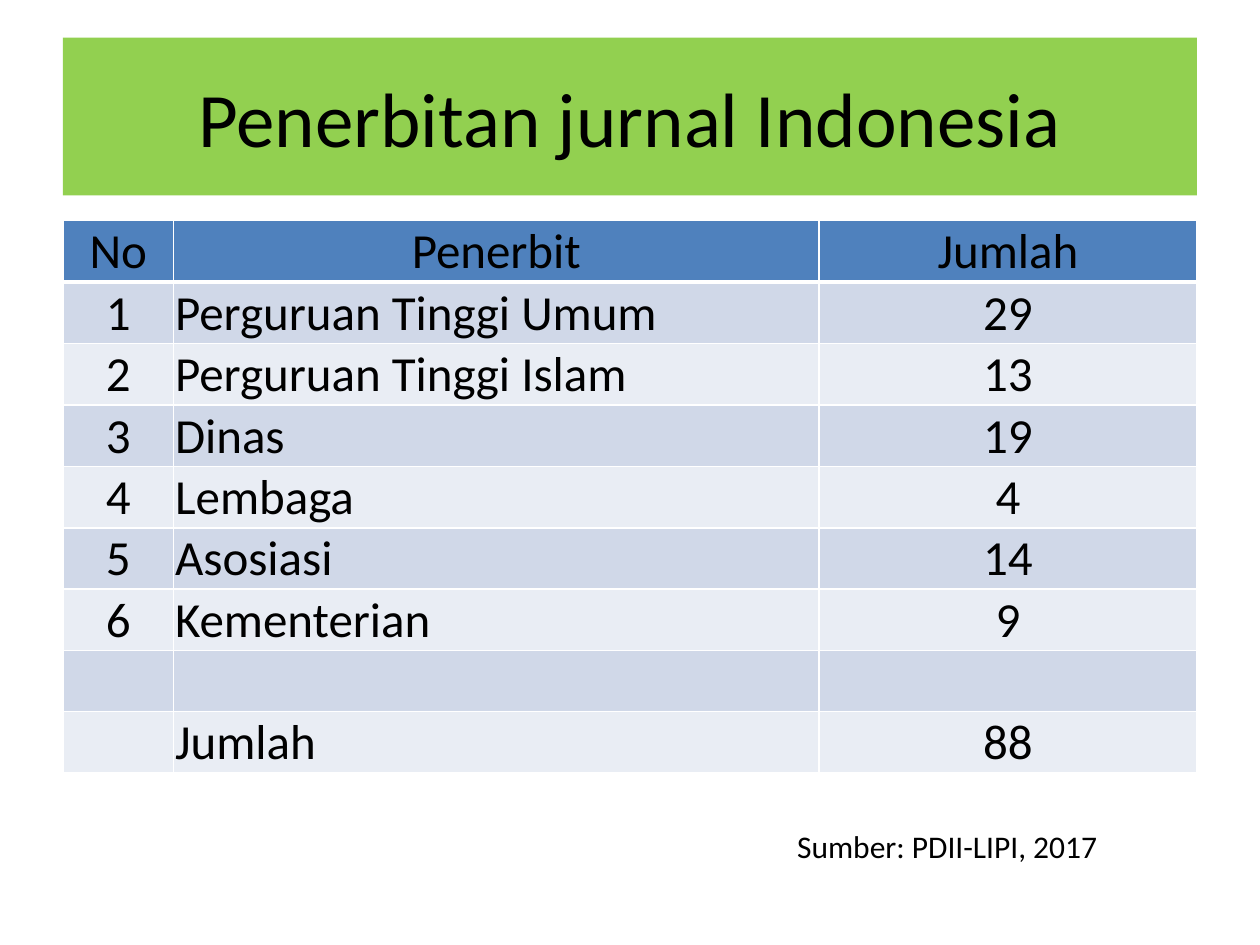
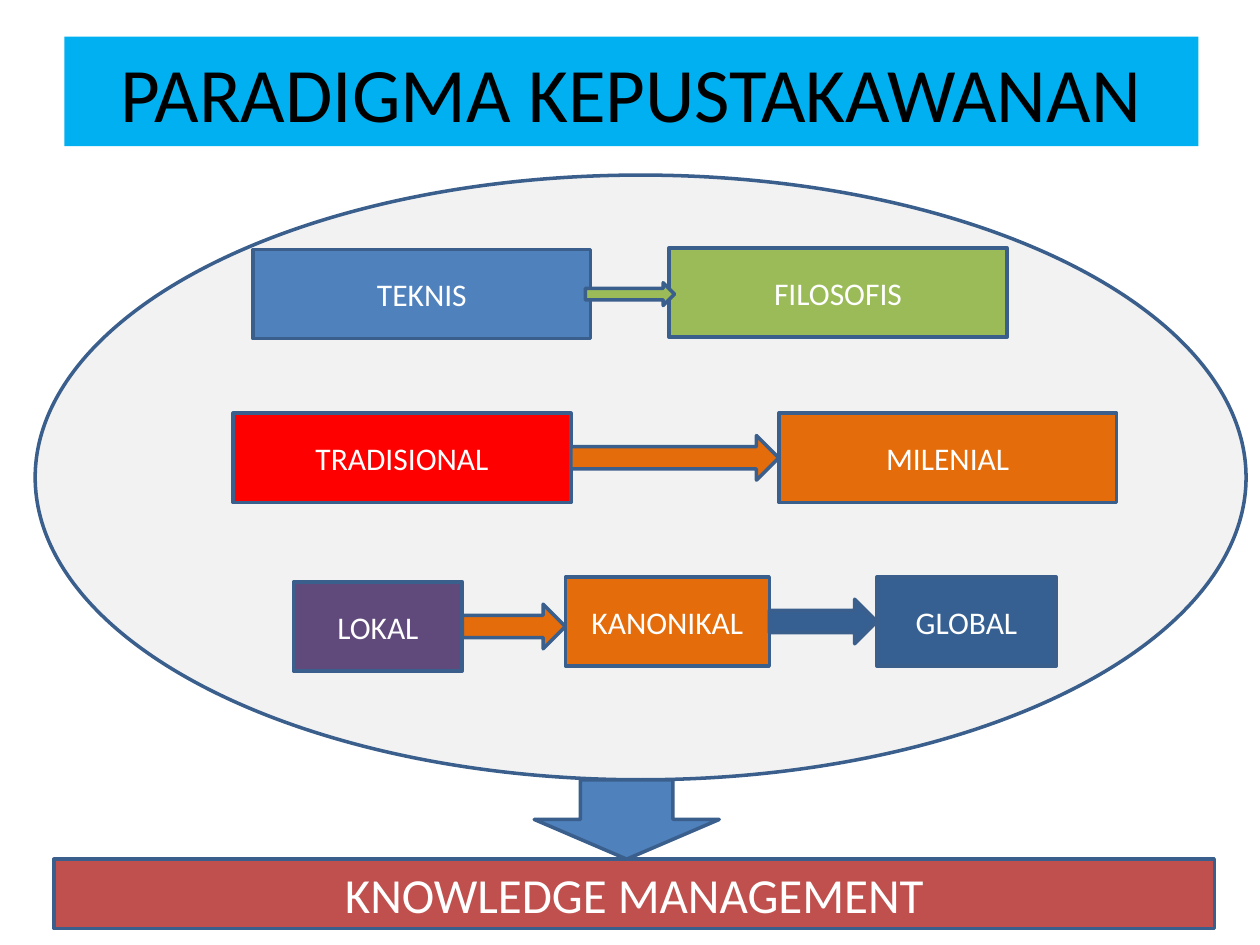
import dataclasses

import lxml.etree
import pptx
import pptx.dml.color
import pptx.enum.shapes
import pptx.enum.text
import pptx.oxml.ns
import pptx.util

Cm = pptx.util.Cm
Pt = pptx.util.Pt
ALIGN = pptx.enum.text.PP_ALIGN
ANCHOR = pptx.enum.text.MSO_ANCHOR
SHAPE = pptx.enum.shapes.MSO_SHAPE


@dataclasses.dataclass(frozen=True)
class Theme:
    font: str = "Calibri"
    title_size: int = 44
    large_size: int = 28
    body_size: int = 18
    line_width: int = 2
    black: str = "000000"
    white: str = "FFFFFF"
    outline: str = "3A5F8C"
    lime: str = "92D050"
    sky: str = "00B0F0"
    blue: str = "4F81BD"
    navy: str = "376092"
    green: str = "9BBB59"
    red: str = "FF0000"
    orange: str = "E46C0A"
    purple: str = "604A7B"
    brick: str = "C0504D"
    pale: str = "F2F2F2"
    bands: tuple = ("D0D8E8", "E9EDF4")


@dataclasses.dataclass(frozen=True)
class Box:
    left: float
    top: float
    width: float
    height: float

    @property
    def right(self):
        return self.left + self.width

    @property
    def middle(self):
        return self.top + self.height / 2

    def inside(self, left, top, width, height):
        return Box(self.left + left, self.top + top, width, height)

    def lengths(self):
        return [Cm(value) for value in dataclasses.astuple(self)]


THEME = Theme()

PUBLISHERS = [
    ("No", "Penerbit", "Jumlah"),
    ("1", "Perguruan Tinggi Umum", "29"),
    ("2", "Perguruan Tinggi Islam", "13"),
    ("3", "Dinas", "19"),
    ("4", "Lembaga", "4"),
    ("5", "Asosiasi", "14"),
    ("6", "Kementerian", "9"),
    ("", "", ""),
    ("", "Jumlah", "88"),
]
COLUMN_WIDTHS = (2.23, 13.01, 7.62)

STAGE_HEIGHT = 1.8
SHIFTS = [
    {
        "stages": [
            ("TEKNIS", THEME.blue, 4.39, 1.5, 6.81),
            ("FILOSOFIS", THEME.green, 12.78, 1.47, 6.81),
        ],
        "arrow_height": 0.46,
        "overlap": 0.11,
    },
    {
        "stages": [
            ("TRADISIONAL", THEME.red, 3.99, 4.8, 6.81),
            ("MILENIAL", THEME.orange, 14.99, 4.8, 6.81),
        ],
        "arrow_height": 0.9,
        "overlap": 0,
    },
    {
        "stages": [
            ("LOKAL", THEME.purple, 5.21, 8.2, 3.4),
            ("KANONIKAL", THEME.orange, 10.69, 8.1, 4.11),
            ("GLOBAL", THEME.navy, 16.97, 8.1, 3.61),
        ],
        "arrow_height": 0.9,
        "overlap": 0,
    },
]


def rgb(color):
    return pptx.dml.color.RGBColor.from_string(color)


def set_attributes(target, values):
    for name, value in values.items():
        setattr(target, name, value)


def write_text(text_frame, text, size, color, alignment):
    paragraph = text_frame.paragraphs[0]
    paragraph.alignment = alignment
    run = paragraph.add_run()
    run.text = text
    set_attributes(run.font, {"name": THEME.font, "size": Pt(size)})
    run.font.color.rgb = rgb(color)


def paint(target, color):
    target.fill.solid()
    target.fill.fore_color.rgb = rgb(color)


def add_block(slide, kind, box, fill, outlined=True, text="", size=THEME.body_size, color=THEME.white):
    shape = slide.shapes.add_shape(kind, *box.lengths())
    shape.shadow.inherit = False
    paint(shape, fill)
    if outlined:
        shape.line.color.rgb = rgb(THEME.outline)
        shape.line.width = Pt(THEME.line_width)
    else:
        shape.line.fill.background()
    if text:
        set_attributes(shape.text_frame, {"word_wrap": True, "vertical_anchor": ANCHOR.MIDDLE})
        write_text(shape.text_frame, text, size, color, ALIGN.CENTER)
    return shape


def add_title(slide, box, text, fill):
    add_block(slide, SHAPE.RECTANGLE, box, fill, False, text, THEME.title_size, THEME.black)


def set_borders(cell, widths):
    properties = cell._tc.get_or_add_tcPr()
    for side, width in widths.items():
        line = lxml.etree.SubElement(properties, pptx.oxml.ns.qn(f"a:ln{side}"), w=str(Pt(width)))
        fill = lxml.etree.SubElement(line, pptx.oxml.ns.qn("a:solidFill"))
        lxml.etree.SubElement(fill, pptx.oxml.ns.qn("a:srgbClr"), val=THEME.white)


def add_publisher_table(slide, box):
    frame = slide.shapes.add_table(len(PUBLISHERS), len(COLUMN_WIDTHS), *box.lengths())
    table = frame.table
    for column, width in zip(table.columns, COLUMN_WIDTHS):
        column.width = Cm(width)
    cell_format = {
        "margin_left": Cm(0.03),
        "margin_top": Cm(0.03),
        "margin_right": Cm(0.03),
        "margin_bottom": 0,
        "vertical_anchor": ANCHOR.BOTTOM,
    }
    for row_index, values in enumerate(PUBLISHERS):
        table.rows[row_index].height = Cm(box.height / len(PUBLISHERS))
        header = row_index == 0
        borders = {"L": 1, "R": 1, "T": 3 if row_index == 1 else 1, "B": 3 if header else 1}
        fill = THEME.blue if header else THEME.bands[(row_index - 1) % 2]
        for column_index, text in enumerate(values):
            cell = table.cell(row_index, column_index)
            set_attributes(cell, cell_format)
            set_borders(cell, borders)
            paint(cell, fill)
            if text:
                alignment = ALIGN.LEFT if column_index == 1 and not header else ALIGN.CENTER
                write_text(cell.text_frame, text, THEME.large_size, THEME.black, alignment)


def add_citation(slide, box, text):
    text_frame = slide.shapes.add_textbox(*box.lengths()).text_frame
    text_frame.word_wrap = False
    write_text(text_frame, text, THEME.body_size, THEME.black, ALIGN.LEFT)


def add_shift(slide, box, stages, arrow_height, overlap):
    placed = []
    for text, fill, left, top, width in stages:
        stage = box.inside(left, top, width, STAGE_HEIGHT)
        add_block(slide, SHAPE.RECTANGLE, stage, fill, text=text)
        placed.append((stage, fill))
    for (start, _), (end, fill) in zip(placed, placed[1:]):
        arrow = Box(
            start.right - overlap,
            start.middle - arrow_height / 2,
            end.left - start.right + 2 * overlap,
            arrow_height,
        )
        add_block(slide, SHAPE.RIGHT_ARROW, arrow, fill)


def add_paradigm(slide, box):
    add_block(slide, SHAPE.OVAL, box, THEME.pale)
    for shift in SHIFTS:
        add_shift(slide, box, **shift)


def add_outcome(slide, box):
    arrow_height = 1.6
    bar = box.inside(0, arrow_height, box.width, box.height - arrow_height)
    add_block(slide, SHAPE.RECTANGLE, bar, THEME.brick, text="KNOWLEDGE MANAGEMENT", size=THEME.large_size)
    add_block(slide, SHAPE.DOWN_ARROW, box.inside(9.68, 0, 3.73, arrow_height), THEME.blue)


def build_publisher_slide(slide):
    add_title(slide, Box(1.27, 0.76, 22.86, 3.18), "Penerbitan jurnal Indonesia", THEME.lime)
    add_publisher_table(slide, Box(1.27, 4.45, 22.86, 11.07))
    add_citation(slide, Box(15.82, 16.54, 6.63, 1.02), "Sumber: PDII-LIPI, 2017")


def build_paradigm_slide(slide):
    add_title(slide, Box(1.3, 0.74, 22.86, 2.21), "PARADIGMA KEPUSTAKAWANAN", THEME.sky)
    add_paradigm(slide, Box(0.71, 3.53, 24.41, 12.19))
    add_outcome(slide, Box(1.09, 15.72, 23.39, 3))


def main():
    presentation = pptx.Presentation()
    set_attributes(presentation, {"slide_width": Cm(25.4), "slide_height": Cm(19.05)})
    for build in (build_publisher_slide, build_paradigm_slide):
        build(presentation.slides.add_slide(presentation.slide_layouts[6]))
    presentation.save("out.pptx")


if __name__ == "__main__":
    main()
